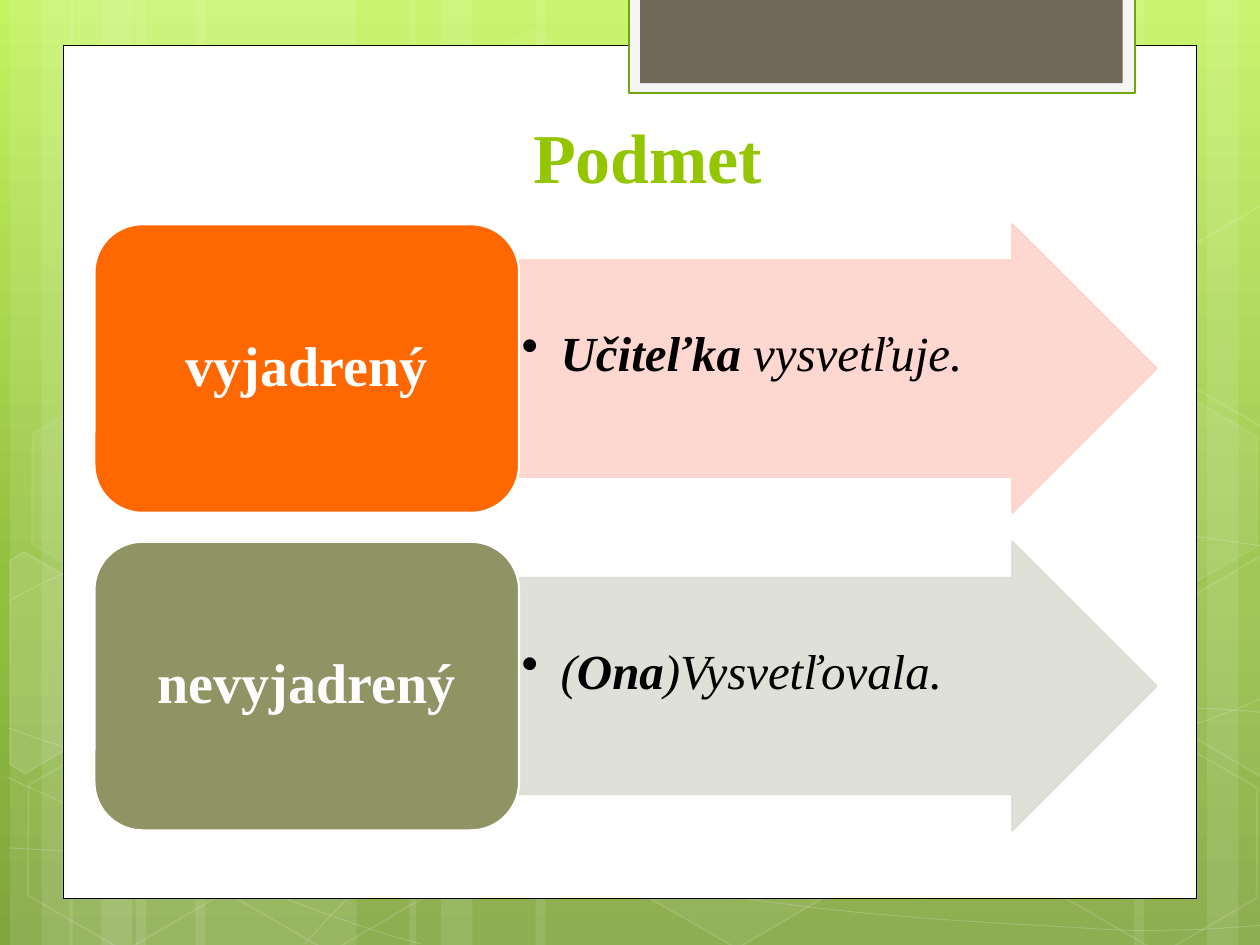
from copy import deepcopy
from typing import NamedTuple, Optional

from lxml import etree
from pptx import Presentation
from pptx import util as u
from pptx.dml.color import RGBColor
from pptx.enum import shapes, text
from pptx.oxml.ns import qn

# The slide is a grid of square cells, 10 columns by 7.5 rows
COLS, ROWS = 10, 7.5
CELL = u.Inches(1)
FONT = "Times New Roman"
WHITE = "FFFFFF"
KIND = shapes.MSO_SHAPE


class Box(NamedTuple):
    col: float
    row: float
    wide: float
    high: float


class Ink(NamedTuple):
    hue: str
    alpha: int = 100
    width: float = 1


class Run(NamedTuple):
    words: str
    bold: bool = False


class Hex(NamedTuple):
    col: float
    row: float
    fill: int
    edge: int


class Shard(NamedTuple):
    pts: list
    fill: int


class Case(NamedTuple):
    name: str
    hue: str
    pale: str
    runs: list


def rgb(hue: str) -> RGBColor:
    return RGBColor.from_string(hue)


def place(box: tuple) -> list:
    return [round(n * CELL) for n in box]


def fade(shape, route: str, alpha: int) -> None:
    if alpha < 100:
        for node in shape._element.spPr.xpath(route):
            etree.SubElement(node, qn("a:alpha")).set("val", str(alpha * 1000))


def paint(shape, fill: Optional[Ink], line: Optional[Ink]) -> None:
    shape.shadow.inherit = False
    if fill:
        shape.fill.solid()
        shape.fill.fore_color.rgb = rgb(fill.hue)
        fade(shape, "./a:solidFill/a:srgbClr", fill.alpha)
    else:
        shape.fill.background()
    if line:
        shape.line.color.rgb = rgb(line.hue)
        shape.line.width = u.Pt(line.width)
        fade(shape, "./a:ln/a:solidFill/a:srgbClr", line.alpha)
    else:
        shape.line.fill.background()


def draw(slide, kind, box: Box, fill: Optional[Ink] = None, line: Optional[Ink] = None):
    shape = slide.shapes.add_shape(kind, *place(box))
    paint(shape, fill, line)
    return shape


def trace(slide, pts: list, close: bool, fill: Optional[Ink], line: Ink):
    first, *rest = [place(p) for p in pts]
    pen = slide.shapes.build_freeform(*first)
    pen.add_line_segments(rest, close=close)
    shape = pen.convert_to_shape()
    paint(shape, fill, line)
    return shape


def bend(shape) -> None:
    """Turn each three straight segments into one cubic curve."""
    legs = shape._element.spPr.xpath(".//a:lnTo")
    for i in range(0, len(legs), 3):
        curve = etree.Element(qn("a:cubicBezTo"))
        legs[i].addprevious(curve)
        for leg in legs[i:i + 3]:
            curve.append(leg[0])
            leg.getparent().remove(leg)


def write(slide, box: Box, runs: list, size: int, hue: str, anchor,
          inset: tuple = (0.1, 0.05, 0.1, 0.05), slant: bool = False):
    frame = slide.shapes.add_textbox(*place(box)).text_frame
    frame.word_wrap = True
    frame.vertical_anchor = anchor
    (frame.margin_left, frame.margin_top,
     frame.margin_right, frame.margin_bottom) = place(inset)
    para = frame.paragraphs[0]
    para.alignment = text.PP_ALIGN.CENTER
    for part in runs:
        run = para.add_run()
        run.text = part.words
        font = run.font
        font.name, font.size = FONT, u.Pt(size)
        font.bold, font.italic = part.bold, slant
        font.color.rgb = rgb(hue)
    return para


def bullet(para) -> None:
    para.alignment = text.PP_ALIGN.LEFT
    props = para._p.get_or_add_pPr()
    props.set("marL", str(u.Inches(0.31)))
    props.set("indent", str(-u.Inches(0.31)))
    etree.SubElement(props, qn("a:buChar")).set("char", "•")


def shade(slide, hues: list) -> None:
    fill = slide.background.fill
    fill.gradient()
    fill.gradient_angle = 270
    first = fill.gradient_stops[0]
    first._gs.addnext(deepcopy(first._gs))
    for stop, (spot, hue) in zip(fill.gradient_stops, hues):
        stop.position = spot
        stop.color.rgb = rgb(hue)


def show(slide, case: Case, row: float) -> None:
    left, split, high = 0.75, 4.12, 2.29
    pale = Ink(case.pale, 90, 1.25)
    draw(slide, KIND.RIGHT_ARROW, Box(split, row, 5.06, high), pale, pale).adjustments[0] = 0.75
    para = write(slide, Box(split, row + high / 8, 4.2, high * 0.75), case.runs, 28, "000000",
                 text.MSO_ANCHOR.TOP, (0.02, 0.54, 0.02, 0.02), slant=True)
    bullet(para)
    tile = Box(left, row, split - left, high)
    draw(slide, KIND.ROUNDED_RECTANGLE, tile, Ink(case.hue), Ink(WHITE, 100, 1.25))
    label = write(slide, Box(left + 0.11, row + 0.11, 3.15, 2.06), [Run(case.name, True)],
                  32, WHITE, text.MSO_ANCHOR.MIDDLE, (0.13, 0.07, 0.13, 0.07))
    label.line_spacing = 0.9


# Background: pale bands as (column, width), curves, hexagons and cut hexagons
BANDS = [(1.08, 1.75), (0.08, 0.5), (0.33, 0.83), (1.55, 1.75), (0.55, 0.5), (0.8, 0.83),
         (7.33, 1.75), (9.58, 0.5), (9, 0.83), (4.25, 3.08), (3.25, 0.5), (3.5, 0.83)]
CURVES = [
    [(0.07, 6.73), (0.61, 6.76), (1.15, 6.79), (1.9, 6.78), (2.65, 6.77), (3.58, 6.75),
     (4.58, 6.65), (5.58, 6.55), (7, 6.36), (7.92, 6.17), (8.83, 5.98), (9.77, 5.68), (10.07, 5.51)],
    [(0.07, 4.77), (0.36, 4.61), (0.65, 4.46), (1.21, 4.31), (1.78, 4.16), (2.59, 3.94),
     (3.47, 3.87), (4.36, 3.8), (5.44, 3.79), (6.54, 3.87), (7.64, 3.95), (9.47, 4.26), (10.07, 4.34)],
    [(0.06, 6.17), (1.27, 6.72), (2.47, 7.27), (3.34, 7.49)],
    [(0.07, 5.78), (0.38, 5.89), (0.7, 6), (1.28, 6.16), (1.86, 6.31), (2.73, 6.56),
     (3.57, 6.73), (4.4, 6.9), (5.45, 7.08), (6.28, 7.18), (7.11, 7.29), (8, 7.33),
     (8.53, 7.36), (9.05, 7.4), (9.19, 7.38), (9.45, 7.38), (9.71, 7.37), (9.89, 7.35), (10.07, 7.34)],
    [(2.42, 7.49), (2.6, 7.29), (2.78, 7.09), (3.02, 6.91), (3.26, 6.73), (3.6, 6.53),
     (3.88, 6.39), (4.16, 6.25), (4.33, 6.19), (4.7, 6.09), (5.06, 5.99), (5.73, 5.85),
     (6.08, 5.78), (6.44, 5.71), (6.49, 5.71), (6.8, 5.69), (7.11, 5.66), (7.6, 5.63),
     (7.94, 5.62), (8.29, 5.61), (8.86, 5.62), (8.86, 5.62), (9.08, 5.62), (9.3, 5.62),
     (9.53, 5.62), (9.71, 5.63), (9.88, 5.64), (9.97, 5.65), (10.06, 5.66), (10.03, 5.65), (10.06, 5.66)],
]
HEXES = [Hex(3.34, 0.36, 4, 8), Hex(4.97, 5.89, 6, 12), Hex(0.11, 5.91, 0, 12),
         Hex(0.14, 3.12, 7, 8), Hex(1.74, 5.92, 0, 12), Hex(7.53, 4.53, 10, 12),
         Hex(8.34, 5.93, 0, 12), Hex(8.34, 3.14, 7, 8)]
SHARDS = [
    Shard([(0.08, 4.45), (0.19, 4.38), (0.96, 4.82), (0.95, 5.7), (0.2, 6.14), (0.08, 6.07)], 10),
    Shard([(9.26, 4.85), (10.01, 4.41), (10.09, 4.46), (10.09, 6.13), (10.02, 6.17), (9.26, 5.73)], 4),
    Shard([(9.26, 2.07), (10.01, 1.63), (10.1, 1.68), (10.09, 3.35), (10.02, 3.39), (9.26, 2.95)], 0),
]
CASES = [
    Case("vyjadrený", "FF6700", "FFD3CC", [Run("Učiteľka", True), Run(" vysvetľuje.")]),
    Case("nevyjadrený", "909465", "DCDDD4", [Run("("), Run("Ona", True), Run(")Vysvetľovala.")]),
]


def main() -> None:
    deck = Presentation()
    deck.slide_width, deck.slide_height = place((COLS, ROWS))
    slide = deck.slides.add_slide(deck.slide_layouts[6])

    # Backdrop
    shade(slide, [(0, "C3F35F"), (0.62, "93BF3F"), (1, "81A53E")])
    for col, wide in BANDS:
        draw(slide, KIND.RECTANGLE, Box(col, 0, wide, ROWS), Ink(WHITE, 10))
    for knots in CURVES:
        bend(trace(slide, knots, False, None, Ink(WHITE, 20, 0.5)))
    for h in HEXES:
        fill = Ink(WHITE, h.fill) if h.fill else None
        cell = draw(slide, KIND.HEXAGON, Box(h.col, h.row, 1.75, 1.52), fill, Ink(WHITE, h.edge))
        cell.adjustments[0] = 0.285
        cell.rotation = 30
    for s in SHARDS:
        trace(slide, s.pts, True, Ink(WHITE, s.fill) if s.fill else None, Ink(WHITE, 12))

    # Page and top tab
    draw(slide, KIND.RECTANGLE, Box(0.5, 0.36, 9, 6.77), Ink(WHITE), Ink("000000", 100, 0.5))
    draw(slide, KIND.RECTANGLE, Box(4.99, -0.02, 4.02, 0.76), Ink("F5F5F5"), Ink("74A510", 100, 1.25))
    draw(slide, KIND.RECTANGLE, Box(5.08, -0.02, 3.83, 0.68), Ink("71685A"))

    # Title and the two cases
    write(slide, Box(1.3, 0.75, 7.68, 0.87), [Run("Podmet", True)], 40, "94C600",
          text.MSO_ANCHOR.BOTTOM)
    for i, case in enumerate(CASES):
        show(slide, case, 1.78 + i * 2.52)

    deck.save("out.pptx")


if __name__ == "__main__":
    main()
